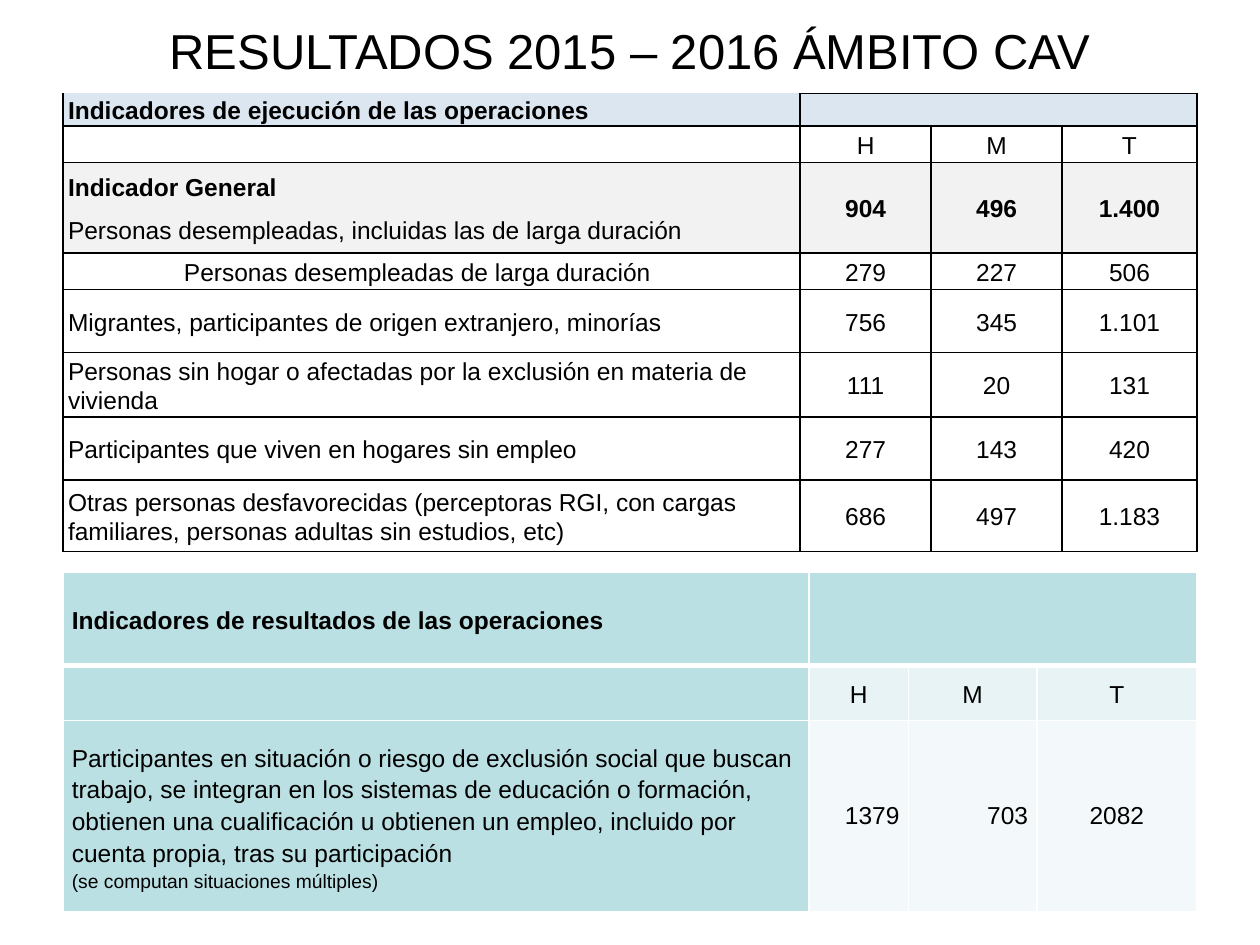
from dataclasses import dataclass

from lxml.etree import SubElement
from pptx import Presentation
from pptx.dml.color import RGBColor
from pptx.enum.text import MSO_ANCHOR, PP_ALIGN
from pptx.oxml.ns import qn
from pptx.util import Inches, Pt


@dataclass(frozen=True)
class Theme:
    font: str = "Arial"
    title: int = 28
    body: int = 14
    note: int = 11
    black: str = "000000"
    white: str = "FFFFFF"
    header_blue: str = "DCE6F1"
    general_grey: str = "F2F2F2"
    teal: str = "BBE0E3"
    teal_light: str = "E7F3F4"
    teal_pale: str = "F3F9FA"


THEME = Theme()
LEFT, WIDTH = 0.5, 9
SEXES = ["H", "M", "T"]
CENTER, RIGHT = PP_ALIGN.CENTER, PP_ALIGN.RIGHT

EXECUTION = [
    ("Migrantes, participantes de origen extranjero, minorías", ["756", "345", "1.101"]),
    ("Personas sin hogar o afectadas por la exclusión en materia de vivienda",
     ["111", "20", "131"]),
    ("Participantes que viven en hogares sin empleo", ["277", "143", "420"]),
    ("Otras personas desfavorecidas (perceptoras RGI, con cargas familiares, "
     "personas adultas sin estudios, etc)", ["686", "497", "1.183"]),
]


def write(frame, text, size=THEME.body, bold=False, align=PP_ALIGN.LEFT,
          spacing=1.0, after=0, indent=0):
    """Fill the empty first paragraph of a frame, or append one."""
    para = frame.paragraphs[0]
    if para.runs:
        para = frame.add_paragraph()
    para.alignment = align
    para.line_spacing = spacing
    para.space_after = Pt(after)
    if indent:
        para._p.get_or_add_pPr().set("marL", str(Inches(indent)))
    span = para.add_run()
    span.text = text
    span.font.name = THEME.font
    span.font.size = Pt(size)
    span.font.bold = bold
    span.font.color.rgb = RGBColor.from_string(THEME.black)


def add_title(slide, text):
    box = slide.shapes.add_textbox(Inches(LEFT), Inches(0.05), Inches(WIDTH), Inches(0.69))
    frame = box.text_frame
    frame.word_wrap = True
    frame.vertical_anchor = MSO_ANCHOR.MIDDLE
    write(frame, text, size=THEME.title, align=CENTER)


def set_borders(cell, color, **widths):
    """Draw the cell's sides; a width of 0 hides that side."""
    properties = cell._tc.get_or_add_tcPr()
    for index, side in enumerate("LRTB"):
        width = widths.get(side, 1)
        line = properties.makeelement(qn(f"a:ln{side}"), {"w": str(Pt(width))})
        if width:
            fill = SubElement(line, qn("a:solidFill"))
            SubElement(fill, qn("a:srgbClr"), val=color)
        else:
            SubElement(line, qn("a:noFill"))
        properties.insert(index, line)


def add_grid(slide, top, columns, rows, margins):
    """Add a plain table whose first row spans all columns after the first."""
    frame = slide.shapes.add_table(len(rows), len(columns), Inches(LEFT), Inches(top),
                                   Inches(WIDTH), Inches(sum(rows)))
    table = frame.table
    table.first_row = table.horz_banding = False
    for column, width in zip(table.columns, columns):
        column.width = Inches(width)
    for row, height in zip(table.rows, rows):
        row.height = Inches(height)
    side, upper = margins
    for cell in table.iter_cells():
        cell.margin_left = cell.margin_right = Inches(side)
        cell.margin_top, cell.margin_bottom = Inches(upper), 0
        cell.vertical_anchor = MSO_ANCHOR.MIDDLE
        SubElement(cell.text_frame.paragraphs[0]._p, qn("a:endParaRPr"),
                   sz=str(THEME.body * 100))
    table.cell(0, 1).merge(table.cell(0, len(columns) - 1))
    return table


def paint(cell, color):
    cell.fill.solid()
    cell.fill.fore_color.rgb = RGBColor.from_string(color)


def write_values(table, row, values, aligns=(CENTER,) * 3, **style):
    for column, (value, align) in enumerate(zip(values, aligns), start=1):
        write(table.cell(row, column).text_frame, value, align=align, **style)


def add_execution_table(slide):
    table = add_grid(slide, 0.74, [5.85, 1.04, 1.04, 1.07],
                     [0.26, 0.29, 0.72, 0.29, 0.5, 0.5, 0.5, 0.57], (0.04, 0.01))
    fills = {0: THEME.header_blue, 2: THEME.general_grey}
    for row in range(len(table.rows)):
        for column in range(len(table.columns)):
            cell = table.cell(row, column)
            paint(cell, fills.get(row, THEME.white))
            set_borders(cell, THEME.black, T=0 if row == column == 0 else 1)

    spacing = 1.07
    write(table.cell(0, 0).text_frame, "Indicadores de ejecución de las operaciones",
          bold=True, spacing=spacing)
    write_values(table, 1, SEXES, spacing=spacing)
    general = table.cell(2, 0).text_frame
    write(general, "Indicador General", bold=True, spacing=spacing, after=8)
    write(general, "Personas desempleadas, incluidas las de larga duración", spacing=spacing)
    write_values(table, 2, ["904", "496", "1.400"], bold=True, spacing=spacing)
    write(table.cell(3, 0).text_frame, "Personas desempleadas de larga duración",
          spacing=spacing, indent=0.92)
    write_values(table, 3, ["279", "227", "506"], spacing=spacing)
    for row, (label, values) in enumerate(EXECUTION, start=4):
        write(table.cell(row, 0).text_frame, label, spacing=spacing)
        write_values(table, row, values, spacing=spacing)


def add_results_table(slide):
    table = add_grid(slide, 4.54, [5.92, 0.79, 1.02, 1.27], [0.74, 0.44, 1.52], (0.07, 0))
    fills = [THEME.teal, THEME.teal_light, THEME.teal_pale]
    edges = [{"B": 3}, {"T": 3}, {}]
    for row, (fill, edge) in enumerate(zip(fills, edges)):
        for column in range(len(table.columns)):
            cell = table.cell(row, column)
            paint(cell, fill if column else THEME.teal)
            set_borders(cell, THEME.white, **edge)

    spacing = 1.15
    write(table.cell(0, 0).text_frame, "Indicadores de resultados de las operaciones",
          bold=True, spacing=spacing)
    write_values(table, 1, SEXES, spacing=spacing)
    label = table.cell(2, 0).text_frame
    write(label, "Participantes en situación o riesgo de exclusión social que buscan trabajo, "
          "se integran en los sistemas de educación o formación, obtienen una cualificación "
          "u obtienen un empleo, incluido por cuenta propia, tras su participación",
          spacing=spacing)
    write(label, "(se computan situaciones múltiples)", size=THEME.note, spacing=spacing)
    write_values(table, 2, ["1379", "703", "2082"], aligns=(RIGHT, RIGHT, CENTER))


def main():
    deck = Presentation()
    deck.slide_width, deck.slide_height = Inches(10), Inches(7.5)
    slide = deck.slides.add_slide(deck.slide_layouts[6])
    add_title(slide, "RESULTADOS 2015 – 2016 ÁMBITO CAV")
    add_results_table(slide)
    add_execution_table(slide)
    deck.save("out.pptx")


if __name__ == "__main__":
    main()
